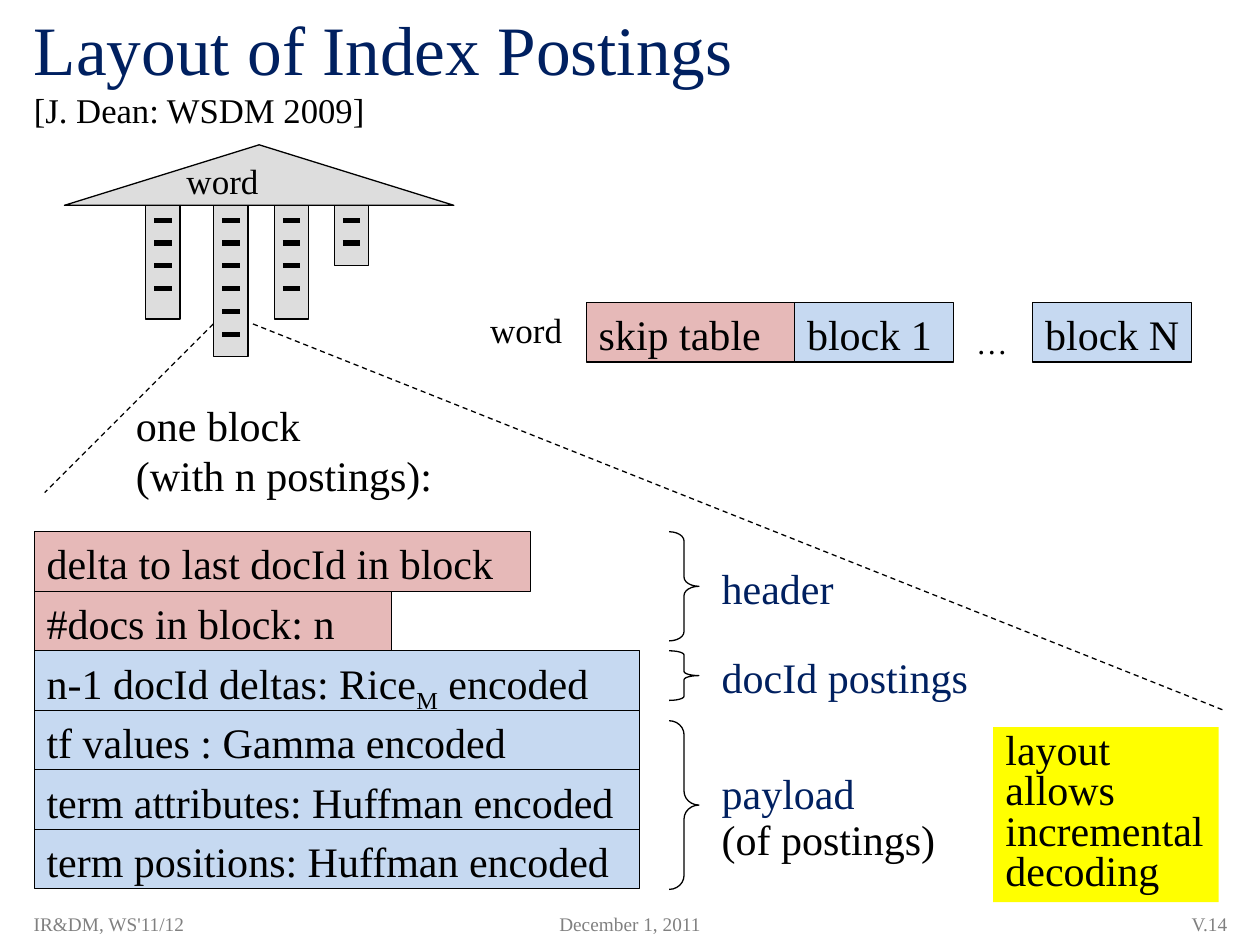
from typing import NamedTuple

from lxml import etree
from pptx import Presentation
from pptx.dml.color import RGBColor
from pptx.enum import dml, shapes, text
from pptx.oxml.ns import qn
from pptx.util import Cm, Pt

FONT = "Times New Roman"
BLACK, NAVY, GREY = "000000", "002060", "808080"
STONE, PINK, BLUE, YELLOW = "DDDDDD", "E6B9B8", "C6D9F1", "FFFF00"
LEFT, CENTER, RIGHT = text.PP_ALIGN.LEFT, text.PP_ALIGN.CENTER, text.PP_ALIGN.RIGHT
TOP, MIDDLE = text.MSO_ANCHOR.TOP, text.MSO_ANCHOR.MIDDLE


class Run(NamedTuple):
    text: str
    size: float = 24
    color: str = BLACK
    baseline: int = 0


class Box(NamedTuple):
    x: float
    y: float
    w: float
    h: float


class Pillar(NamedTuple):
    x: float
    h: float
    postings: int


class Cell(NamedTuple):
    """A filled rectangle holding one line of text."""
    x: float
    w: float
    fill: str
    runs: list[Run]


class Brace(NamedTuple):
    y: float
    h: float
    curl: float


class Label(NamedTuple):
    box: Box
    lines: list[list[Run]]
    spacing: float = 1.0


class Footer(NamedTuple):
    x: float
    w: float
    align: text.PP_ALIGN
    text: str


def rgb(color: str) -> RGBColor:
    return RGBColor.from_string(color)


def lengths(box: Box) -> list[Cm]:
    return [Cm(v) for v in box]


def add_run(p, run: Run) -> None:
    r = p.add_run()
    r.text = run.text
    r.font.name, r.font.size = FONT, Pt(run.size)
    r.font.color.rgb = rgb(run.color)
    if run.baseline:
        r.font._element.set("baseline", str(run.baseline))


def write(sp, lines: list[list[Run]], align=LEFT, anchor=TOP, spacing: float = 1.0) -> None:
    tf = sp.text_frame
    tf.word_wrap = True
    tf.auto_size = text.MSO_AUTO_SIZE.NONE
    tf.vertical_anchor = anchor
    if align == LEFT:
        tf.margin_right = 0
    for i, runs in enumerate(lines):
        p = tf.add_paragraph() if i else tf.paragraphs[0]
        p.alignment, p.line_spacing = align, spacing
        for run in runs:
            add_run(p, run)


def add_shape(s, kind, box: Box, fill: str = "", line: str = BLACK):
    sp = s.shapes.add_shape(kind, *lengths(box))
    sp.shadow.inherit = False
    if fill:
        sp.fill.solid()
        sp.fill.fore_color.rgb = rgb(fill)
    else:
        sp.fill.background()
    if line:
        sp.line.color.rgb = rgb(line)
        sp.line.width = Pt(0.75)
    else:
        sp.line.fill.background()
    return sp


def add_line(s, x1: float, y1: float, x2: float, y2: float, width: float, dashed: bool = False) -> None:
    c = s.shapes.add_connector(shapes.MSO_CONNECTOR.STRAIGHT, Cm(x1), Cm(y1), Cm(x2), Cm(y2))
    c.line.color.rgb = rgb(BLACK)
    c.line.width = Pt(width)
    if dashed:
        c.line.dash_style = dml.MSO_LINE.DASH
    etree.SubElement(c._element.spPr, qn("a:effectLst"))


def add_title(s) -> None:
    sp = s.shapes.title
    sp.left, sp.top, sp.width, sp.height = lengths(Box(0.43, 0.43, 24.56, 1.9))
    write(sp, [[Run("Layout of Index Postings ", 39.6, NAVY)]], anchor=MIDDLE)
    p = sp.text_frame.paragraphs[0]
    p.add_line_break()
    add_run(p, Run("[J. Dean: WSDM 2009]", 19.8))


def add_pillar(s, pillar: Pillar, top: float) -> None:
    """Draw a posting list with one tick per posting."""
    add_shape(s, shapes.MSO_SHAPE.RECTANGLE, Box(pillar.x, top, 0.69, pillar.h), STONE)
    for i in range(pillar.postings):
        y = top + 0.3 + 0.46 * i
        add_line(s, pillar.x + 0.17, y, pillar.x + 0.52, y, 3)


def add_cell(s, cell: Cell, y: float) -> None:
    sp = add_shape(s, shapes.MSO_SHAPE.RECTANGLE, Box(cell.x, y, cell.w, ROW_H), cell.fill)
    write(sp, [cell.runs])


def add_label(s, label: Label) -> None:
    sp = s.shapes.add_textbox(*lengths(label.box))
    write(sp, label.lines, spacing=label.spacing)


ROW_H = 1.2
ROOF = Box(1.3, 2.92, 7.85, 1.22)
PILLARS = [Pillar(2.94, 2.29, 4), Pillar(4.31, 3.05, 6), Pillar(5.53, 2.29, 4), Pillar(6.74, 1.22, 2)]

LIST_Y = 6.1
LIST_CELLS = [
    Cell(11.82, 4.2, PINK, [Run("skip table")]),
    Cell(16.02, 3.2, BLUE, [Run("block 1")]),
    Cell(20.82, 3.2, BLUE, [Run("block N")]),
]

BLOCK_X, BLOCK_Y = 0.69, 10.72
BLOCK_CELLS = [
    Cell(BLOCK_X, 10, PINK, [Run("delta to last docId in block")]),
    Cell(BLOCK_X, 7.2, PINK, [Run("#docs in block: n")]),
    Cell(BLOCK_X, 12.2, BLUE, [Run("n-1 docId deltas: Rice"), Run("M", baseline=-25000), Run(" encoded")]),
    Cell(BLOCK_X, 12.2, BLUE, [Run("tf values : Gamma encoded")]),
    Cell(BLOCK_X, 12.2, BLUE, [Run("term attributes: Huffman encoded")]),
    Cell(BLOCK_X, 12.2, BLUE, [Run("term positions: Huffman encoded")]),
]
BRACES = [Brace(BLOCK_Y, 2.2, 0.31), Brace(13.12, 1, 0.14), Brace(14.53, 3.4, 0.47)]

LABELS = [
    Label(Box(3.51, 3.1, 1.98, 1.12), [[Run("word", 20)]]),
    Label(Box(9.63, LIST_Y, 1.98, 1.12), [[Run("word", 20)]]),
    Label(Box(19.43, 6.38, 1.14, 1.02), [[Run("…", 18)]]),
    Label(Box(2.49, 7.92, 6.55, 2.31), [[Run("one block")], [Run("(with n postings):")]]),
    Label(Box(14.3, 11.33, 2.79, 1.17), [[Run("header", color=NAVY)]], 0.9),
    Label(Box(14.3, 13.12, 5.51, 1.17), [[Run("docId postings", color=NAVY)]], 0.9),
    Label(Box(14.3, 15.47, 4.85, 2.11), [[Run("payload", color=NAVY)], [Run("(of postings)")]], 0.9),
]
FOOTERS = [
    Footer(0.43, 7.62, LEFT, "IR&DM, WS'11/12"),
    Footer(9.74, 5.92, CENTER, "December 1, 2011"),
    Footer(19.47, 5.52, RIGHT, "V.14"),
]


def main() -> None:
    prs = Presentation()
    prs.slide_width, prs.slide_height = Cm(25.4), Cm(19.05)
    s = prs.slides.add_slide(prs.slide_layouts[5])
    add_title(s)

    add_shape(s, shapes.MSO_SHAPE.ISOSCELES_TRIANGLE, ROOF, STONE)
    for pillar in PILLARS:
        add_pillar(s, pillar, ROOF.y + ROOF.h)
    add_line(s, 4.3, 6.53, 0.9, 9.93, 0.75, dashed=True)
    add_line(s, 5.1, 6.53, 24.7, 14.33, 0.75, dashed=True)

    for cell in LIST_CELLS:
        add_cell(s, cell, LIST_Y)
    for i, cell in enumerate(BLOCK_CELLS):
        add_cell(s, cell, BLOCK_Y + i * ROW_H)
    for brace in BRACES:
        sp = add_shape(s, shapes.MSO_SHAPE.RIGHT_BRACE, Box(13.49, brace.y, 0.6, brace.h))
        sp.adjustments[0] = brace.curl
    for label in LABELS:
        add_label(s, label)

    note = add_shape(s, shapes.MSO_SHAPE.RECTANGLE, Box(20.02, 14.66, 4.55, 3.53), YELLOW, line="")
    write(note, [[Run(word)] for word in ("layout", "allows", "incremental", "decoding")], spacing=0.8)
    for footer in FOOTERS:
        sp = s.shapes.add_textbox(*lengths(Box(footer.x, 18.21, footer.w, 0.84)))
        write(sp, [[Run(footer.text, 11, GREY)]], footer.align, MIDDLE)
    prs.save("out.pptx")


if __name__ == "__main__":
    main()
